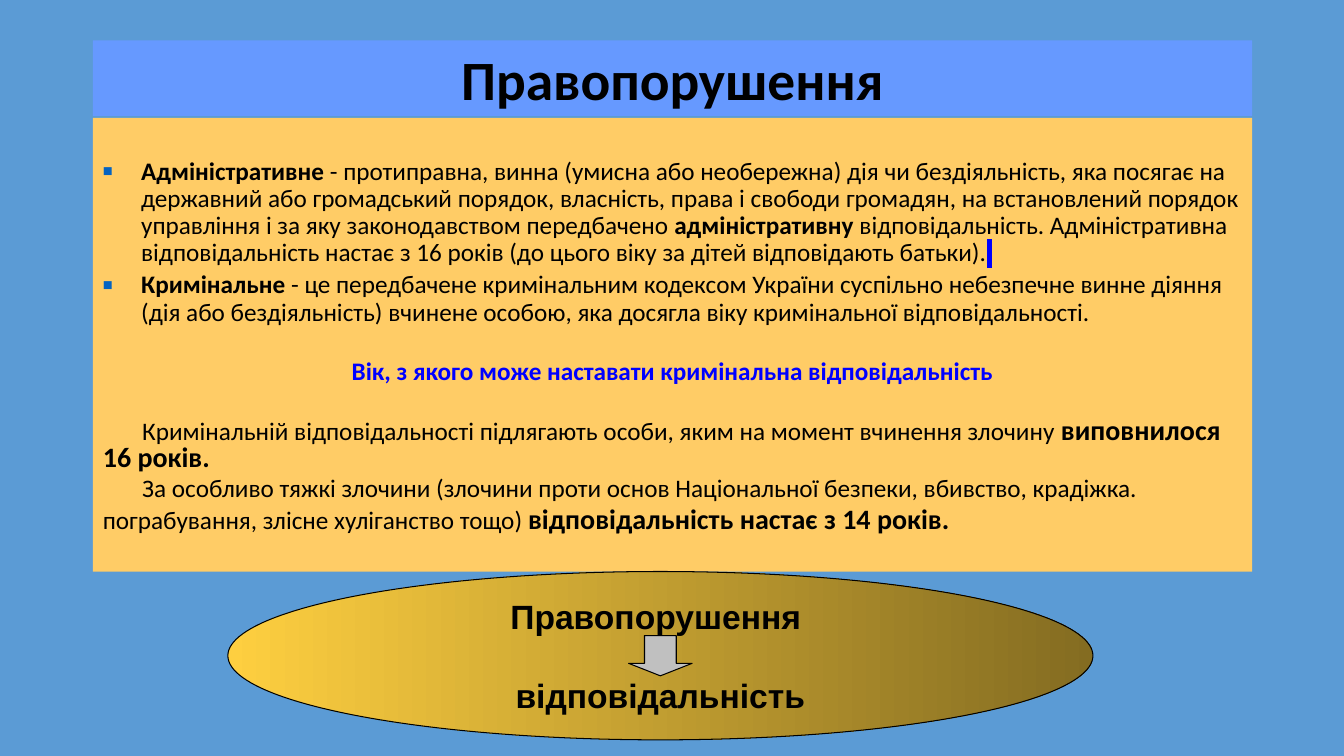
from lxml.etree import SubElement
from pptx import Presentation
from pptx.dml.color import RGBColor
from pptx.enum.shapes import MSO_SHAPE as SHAPE
from pptx.enum.text import MSO_ANCHOR as ANCHOR, MSO_AUTO_SIZE as AUTO, PP_ALIGN as ALIGN
from pptx.oxml import parse_xml
from pptx.oxml.ns import nsdecls, qn
from pptx.util import Inches, Pt

COLORS = {
    "background": "5B9BD5", "title": "6699FF", "body": "FFCC66",
    "text": "000000", "accent": "0000FF", "bullet": "0563C1",
    "gold": "FECF40", "bronze": "846C21", "arrow": "C0C0C0",
}
PLAIN = {"size": Pt(18), "name": "Calibri", "bold": False}
BOLD = {**PLAIN, "bold": True}
LARGE = {**BOLD, "size": Pt(20)}
TALL = {**PLAIN, "size": Pt(25.2)}
TITLE = {**BOLD, "size": Pt(39.6)}
MARK = {**PLAIN, "name": "Cambria"}
OVAL = {**BOLD, "size": Pt(24), "name": "Arial"}

ITEM = {"alignment": ALIGN.LEFT, "line_spacing": 0.9, "space_before": Pt(3.6)}
FIRST = {**ITEM, "space_before": Pt(0)}
HEADING = {"alignment": ALIGN.CENTER, "line_spacing": 0.8, "space_before": Pt(24.6)}
NOTE = {"alignment": ALIGN.LEFT, "line_spacing": 0.8, "space_before": Pt(3.6)}
LEAD = {**NOTE, "space_before": Pt(24)}

BODY = [
    (FIRST, True, [
        ("Адміністративне ", BOLD, "text"),
        ("- протиправна, винна (умисна або необережна) дія чи бездіяльність, яка посягає на "
         "державний або громадський порядок, власність, права і свободи громадян, на встановлений "
         "порядок управління і за яку законодавством передбачено ", PLAIN, "text"),
        ("адміністративну ", BOLD, "text"),
        ("відповідальність. Адміністративна відповідальність настає з 16 років "
         "(до цього віку за дітей відповідають батьки).", PLAIN, "text"),
        (" ", MARK, "text")]),
    (ITEM, True, [
        ("Кримінальне", BOLD, "text"),
        (" - це передбачене кримінальним кодексом України суспільно небезпечне винне діяння "
         "(дія або бездіяльність) вчинене особою, яка досягла віку кримінальної "
         "відповідальності.", PLAIN, "text")]),
    (HEADING, False, [
        ("Вік, з якого може наставати кримінальна відповідальність", BOLD, "accent")]),
    (LEAD, False, [
        ("Кримінальній відповідальності підлягають особи, яким на момент вчинення злочину ",
         PLAIN, "text"),
        ("виповнилося 16 років.", LARGE, "text")]),
    (NOTE, False, [
        ("За особливо тяжкі злочини (злочини проти основ Національної безпеки, вбивство, "
         "крадіжка. пограбування, злісне хуліганство тощо) ", PLAIN, "text"),
        ("відповідальність настає з 14 років.", LARGE, "text"),
        (" ", TALL, "text")]),
]


def rgb(name):
    return RGBColor.from_string(COLORS[name])


def apply(target, formats):
    for key, value in formats.items():
        setattr(target, key, value)


def place(sp, box):
    for key, value in zip(("left", "top", "width", "height"), box):
        setattr(sp, key, Inches(value))


def paint(sp, color):
    sp.fill.solid()
    sp.fill.fore_color.rgb = rgb(color)


def add_run(p, text, formats, color="text"):
    r = p.add_run()
    r.text = text
    apply(r.font, formats)
    r.font.color.rgb = rgb(color)
    return r


def highlight(r, color):
    mark = parse_xml(f'<a:highlight {nsdecls("a")}><a:srgbClr val="{COLORS[color]}"/></a:highlight>')
    r.font._element.find(qn("a:latin")).addprevious(mark)


def set_indent(p, left, first, bullet):
    pPr = p._p.get_or_add_pPr()
    pPr.set("marL", str(Inches(left)))
    pPr.set("indent", str(Inches(first)))
    if not bullet:
        SubElement(pPr, qn("a:buNone"))
        return
    color = SubElement(pPr, qn("a:buClr"))
    SubElement(color, qn("a:srgbClr"), val=COLORS["bullet"])
    SubElement(pPr, qn("a:buSzPct"), val="65000")
    SubElement(pPr, qn("a:buFont"), typeface="Arial")
    SubElement(pPr, qn("a:buChar"), char="■")


def build_title(sp, box):
    place(sp, box)
    paint(sp, "title")
    tf = sp.text_frame
    apply(tf, {"vertical_anchor": ANCHOR.MIDDLE, "auto_size": AUTO.NONE, "word_wrap": True})
    p = tf.paragraphs[0]
    p.alignment = ALIGN.CENTER
    add_run(p, "Правопорушення", TITLE)


def build_body(sp, box):
    place(sp, box)
    paint(sp, "body")
    tf = sp.text_frame
    apply(tf, {"vertical_anchor": ANCHOR.TOP, "auto_size": AUTO.NONE,
               "word_wrap": True, "margin_top": Inches(0.4)})
    for i, (formats, bullet, runs) in enumerate(BODY):
        p = tf.add_paragraph() if i else tf.paragraphs[0]
        apply(p, formats)
        if bullet:
            set_indent(p, 0.38, -0.38, True)
        else:
            set_indent(p, 0, 0 if formats is HEADING else 0.39, False)
        for text, font, color in runs:
            r = add_run(p, text, font, color)
            if font is MARK:
                highlight(r, "accent")


def add_outlined(s, shape, box):
    x, y, w, h = map(Inches, box)
    sp = s.shapes.add_shape(shape, x, y, w, h)
    sp.shadow.inherit = False
    sp.line.color.rgb = rgb("text")
    sp.line.width = Pt(0.75)
    return sp


def build_conclusion(s, box):
    x, y, w, h = box
    oval = add_outlined(s, SHAPE.OVAL, box)
    oval.fill.gradient()
    oval.fill.gradient_angle = 0
    for stop, color, position in zip(oval.fill.gradient_stops, ("gold", "bronze"), (0, 1)):
        stop.color.rgb = rgb(color)
        stop.position = position
    tf = oval.text_frame
    apply(tf, {"vertical_anchor": ANCHOR.MIDDLE, "word_wrap": False})
    for i, text in enumerate(("Правопорушення ", "відповідальність")):
        p = tf.add_paragraph() if i else tf.paragraphs[0]
        apply(p, {"alignment": ALIGN.CENTER, "space_before": Pt(28 * i)})
        add_run(p, text, OVAL)
    arrow_w, arrow_h = 0.63, 0.4
    arrow = add_outlined(s, SHAPE.DOWN_ARROW,
                         (x + (w - arrow_w) / 2, y + (h - arrow_h) / 2, arrow_w, arrow_h))
    paint(arrow, "arrow")
    arrow.adjustments[1] = 0.31


def main():
    prs = Presentation()
    prs.slide_width, prs.slide_height = Inches(13.33), Inches(7.5)
    s = prs.slides.add_slide(prs.slide_layouts[1])
    paint(s.background, "background")
    build_title(s.shapes.title, (0.92, 0.4, 11.5, 0.75))
    build_body(s.placeholders[1], (0.92, 1.17, 11.5, 4.5))
    build_conclusion(s, (2.26, 5.67, 8.58, 1.67))
    prs.save("out.pptx")


if __name__ == "__main__":
    main()
